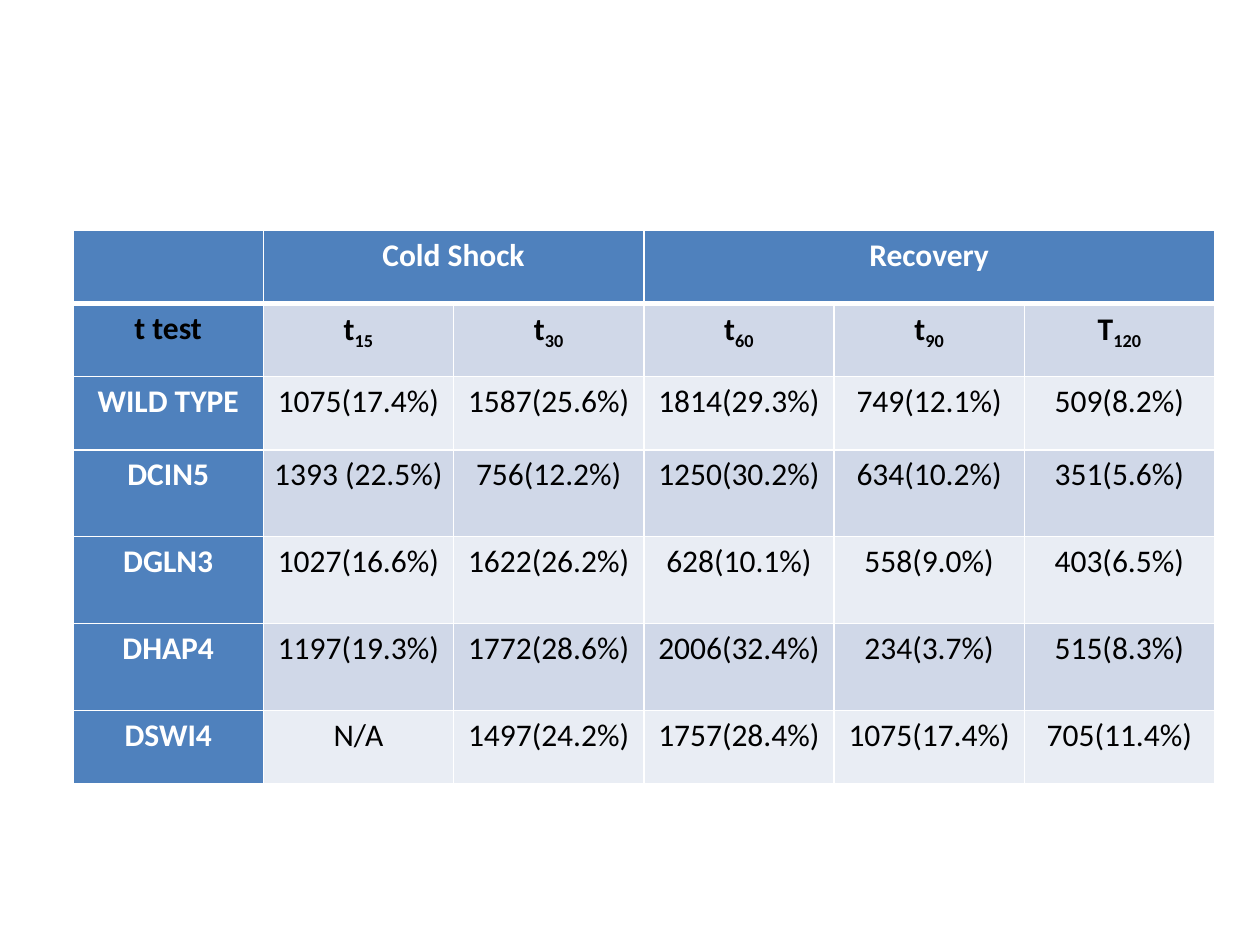
from lxml.etree import SubElement
from pptx import Presentation
from pptx.dml.color import RGBColor as RGB
from pptx.enum.text import PP_ALIGN as Align
from pptx.oxml.ns import qn
from pptx.util import Inches, Pt

COLORS = {"head": "4F81BD", "dark": "D0D8E8", "light": "E9EDF4",
          "white": "FFFFFF", "black": "000000"}

# A tuple holds a base and its subscript.
ROWS = [
    ["", "Cold Shock", "", "Recovery", "", ""],
    ["t test", ("t", "15"), ("t", "30"), ("t", "60"), ("t", "90"), ("T", "120")],
    ["WILD TYPE", "1075(17.4%)", "1587(25.6%)", "1814(29.3%)", "749(12.1%)", "509(8.2%)"],
    ["DCIN5", "1393 (22.5%)", "756(12.2%)", "1250(30.2%)", "634(10.2%)", "351(5.6%)"],
    ["DGLN3", "1027(16.6%)", "1622(26.2%)", "628(10.1%)", "558(9.0%)", "403(6.5%)"],
    ["DHAP4", "1197(19.3%)", "1772(28.6%)", "2006(32.4%)", "234(3.7%)", "515(8.3%)"],
    ["DSWI4", "N/A", "1497(24.2%)", "1757(28.4%)", "1075(17.4%)", "705(11.4%)"],
]
SPANS = [(1, 2), (3, 5)]
LEFT, TOP, COL = 0.58, 1.83, 1.51
HEIGHTS = [0.58, 0.58, 0.58, 0.69, 0.69, 0.69, 0.58]


def add_borders(cell, row):
    """Draw white cell edges, with a heavy rule under the header row."""
    props = cell._tc.get_or_add_tcPr()
    widths = {"L": 1, "R": 1, "T": 3 if row == 1 else 1, "B": 3 if row == 0 else 1}
    for side, width in widths.items():
        line = SubElement(props, qn(f"a:ln{side}"), w=str(Pt(width)))
        fill = SubElement(line, qn("a:solidFill"))
        SubElement(fill, qn("a:srgbClr"), val=COLORS["white"])


def add_text(cell, text, color, bold):
    para = cell.text_frame.paragraphs[0]
    para.alignment = Align.CENTER
    para.line_spacing = 1.15
    parts = text if isinstance(text, tuple) else (text,)
    for i, part in enumerate(parts):
        run = para.add_run()
        run.text = part
        font = run.font
        font.name, font.size, font.bold = "Calibri", Pt(18), bold
        font.color.rgb = RGB.from_string(COLORS[color])
        if i:
            font._element.set("baseline", "-25000")


def style_cell(cell, row, col, text):
    head = row == 0 or col == 0
    add_borders(cell, row)
    fill = "head" if head else "dark" if row % 2 else "light"
    cell.fill.solid()
    cell.fill.fore_color.rgb = RGB.from_string(COLORS[fill])
    cell.margin_left = cell.margin_right = Inches(0.07)
    cell.margin_top = cell.margin_bottom = 0
    if text:
        color = "white" if head and row != 1 else "black"
        add_text(cell, text, color, head or row == 1)


def main():
    prs = Presentation()
    prs.slide_width, prs.slide_height = Inches(10), Inches(7.5)
    slide = prs.slides.add_slide(prs.slide_layouts[6])
    count = len(ROWS[0])
    table = slide.shapes.add_table(
        len(ROWS), count, Inches(LEFT), Inches(TOP),
        Inches(COL * count), Inches(sum(HEIGHTS))).table
    for col in table.columns:
        col.width = Inches(COL)
    for row, height in zip(table.rows, HEIGHTS):
        row.height = Inches(height)
    for first, last in SPANS:
        table.cell(0, first).merge(table.cell(0, last))
    for r, row in enumerate(ROWS):
        for c, text in enumerate(row):
            style_cell(table.cell(r, c), r, c, text)
    prs.save("out.pptx")


if __name__ == "__main__":
    main()
